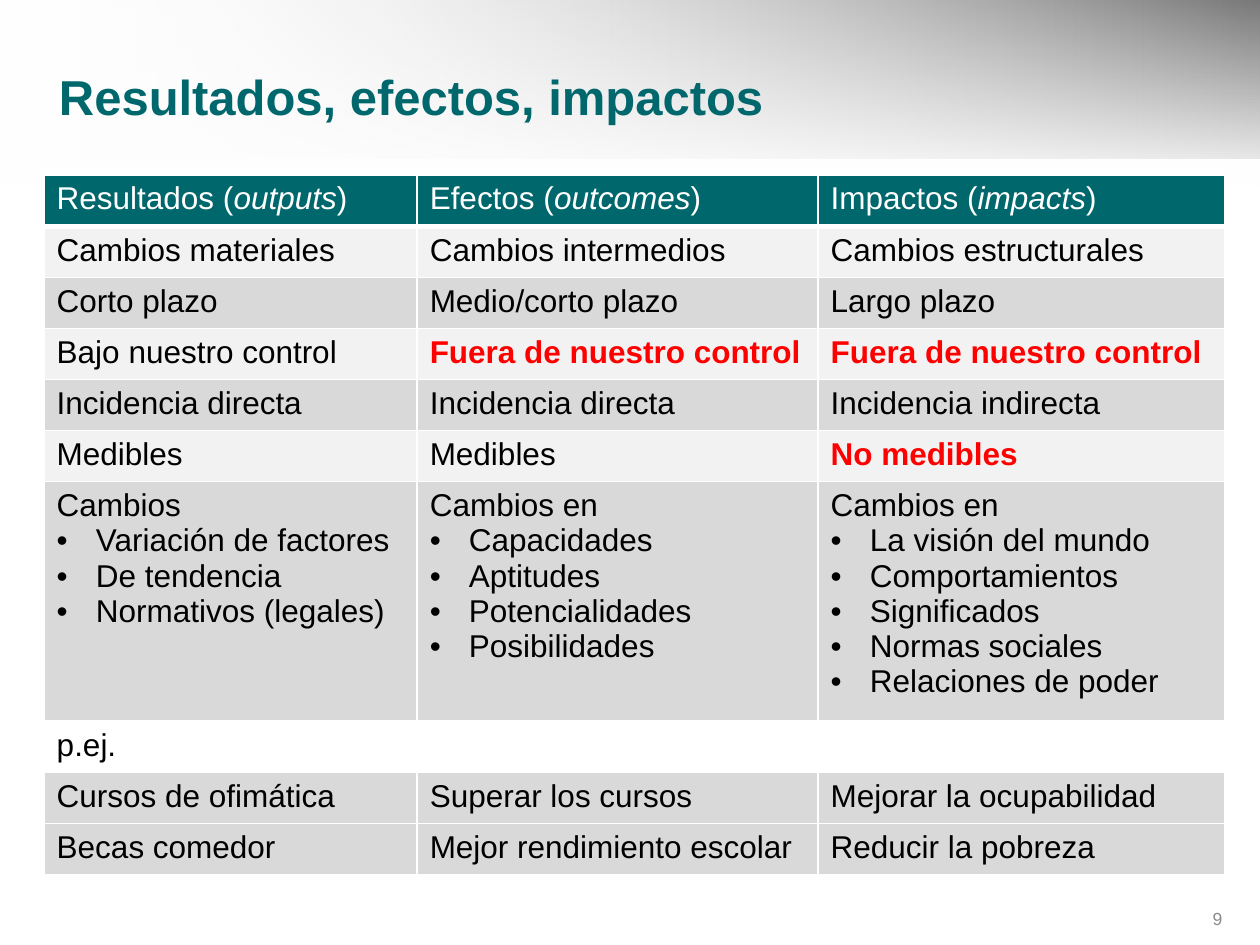
from lxml.etree import SubElement
from pptx import Presentation
from pptx.dml.color import RGBColor
from pptx.enum.shapes import MSO_SHAPE
from pptx.enum.text import MSO_ANCHOR, PP_ALIGN
from pptx.oxml import parse_xml
from pptx.oxml.ns import nsdecls, qn
from pptx.util import Cm, Pt

# Content
TITLE = "Resultados, efectos, impactos"
PAGE_NUMBER = "9"
HEADERS = [("Resultados", "outputs"), ("Efectos", "outcomes"), ("Impactos", "impacts")]
ROWS = [
    ["Cambios materiales", "Cambios intermedios", "Cambios estructurales"],
    ["Corto plazo", "Medio/corto plazo", "Largo plazo"],
    ["Bajo nuestro control", "Fuera de nuestro control", "Fuera de nuestro control"],
    ["Incidencia directa", "Incidencia directa", "Incidencia indirecta"],
    ["Medibles", "Medibles", "No medibles"],
    [
        "Cambios\nVariación de factores\nDe tendencia\nNormativos (legales)",
        "Cambios en\nCapacidades\nAptitudes\nPotencialidades\nPosibilidades",
        "Cambios en\nLa visión del mundo\nComportamientos\nSignificados\n"
        "Normas sociales\nRelaciones de poder",
    ],
    ["p.ej.", "", ""],
    ["Cursos de ofimática", "Superar los cursos", "Mejorar la ocupabilidad"],
    ["Becas comedor", "Mejor rendimiento escolar", "Reducir la pobreza"],
]
WARNINGS = {"Fuera de nuestro control", "No medibles"}

# Style
FONT = "Arial"
TEAL = RGBColor(0x00, 0x67, 0x6C)
WHITE = RGBColor(0xFF, 0xFF, 0xFF)
BLACK = RGBColor(0x00, 0x00, 0x00)
RED = RGBColor(0xFF, 0x00, 0x00)
GRAY = RGBColor(0x89, 0x89, 0x89)
LIGHT = RGBColor(0xF2, 0xF2, 0xF2)
DARK = RGBColor(0xD9, 0xD9, 0xD9)
ROW_FILLS = [LIGHT, DARK, LIGHT, DARK, LIGHT, DARK, None, DARK, DARK]

# Layout in centimetres
COLUMN_WIDTHS = [7.52, 8.08, 8.2]
ROW_HEIGHT, LIST_ROW_HEIGHT = 1.03, 4.5
LIST_ROW = 6
BULLET_INDENT = 0.79


def style_font(font, size, color, bold=False):
    font.name = FONT
    font.size = Pt(size)
    font.color.rgb = color
    font.bold = bold


def add_gradient_band(slide, height, angle, stops):
    """Stops are (position %, colour, opacity %)."""
    shape = slide.shapes.add_shape(MSO_SHAPE.RECTANGLE, 0, 0, Cm(25.4), Cm(height))
    shape.shadow.inherit = False
    shape.line.fill.background()
    stop_xml = "".join(
        f'<a:gs pos="{position * 1000}"><a:srgbClr val="{color}">'
        f'<a:alpha val="{opacity * 1000}"/></a:srgbClr></a:gs>'
        for position, color, opacity in stops
    )
    gradient = parse_xml(
        f'<a:gradFill {nsdecls("a")} rotWithShape="1"><a:gsLst>{stop_xml}</a:gsLst>'
        f'<a:lin ang="{angle * 60000}" scaled="0"/></a:gradFill>'
    )
    shape.element.spPr.find(qn("a:prstGeom")).addnext(gradient)


def add_text(slide, text, left, top, width, height, align, size, color, bold=False):
    text_frame = slide.shapes.add_textbox(Cm(left), Cm(top), Cm(width), Cm(height)).text_frame
    text_frame.word_wrap = True
    text_frame.vertical_anchor = MSO_ANCHOR.MIDDLE
    text_frame.text = text
    paragraph = text_frame.paragraphs[0]
    paragraph.alignment = align
    style_font(paragraph.runs[0].font, size, color, bold)


def style_cell(cell, fill, bottom_width=1):
    if fill is None:
        cell.fill.background()
    else:
        cell.fill.solid()
        cell.fill.fore_color.rgb = fill
    properties = cell._tc.get_or_add_tcPr()
    for index, (side, width) in enumerate([("L", 1), ("R", 1), ("T", 1), ("B", bottom_width)]):
        properties.insert(index, parse_xml(
            f'<a:ln{side} {nsdecls("a")} w="{Pt(width)}"><a:solidFill>'
            f'<a:srgbClr val="{WHITE}"/></a:solidFill></a:ln{side}>'
        ))


def add_bullet(paragraph):
    properties = paragraph._p.get_or_add_pPr()
    properties.set("marL", str(Cm(BULLET_INDENT)))
    properties.set("indent", str(-Cm(BULLET_INDENT)))
    SubElement(properties, qn("a:buFont")).set("typeface", FONT)
    SubElement(properties, qn("a:buChar")).set("char", "•")


def add_comparison_table(slide):
    table = slide.shapes.add_table(
        len(ROWS) + 1, len(HEADERS), Cm(0.89), Cm(3.53), Cm(sum(COLUMN_WIDTHS)),
        Cm(ROW_HEIGHT * len(ROWS) + LIST_ROW_HEIGHT),
    ).table
    table.first_row = False
    table.horz_banding = False
    for column, width in zip(table.columns, COLUMN_WIDTHS):
        column.width = Cm(width)
    for index, row in enumerate(table.rows):
        row.height = Cm(LIST_ROW_HEIGHT if index == LIST_ROW else ROW_HEIGHT)

    # Header row, with the English term in italics
    for cell, (name, term) in zip(table.rows[0].cells, HEADERS):
        style_cell(cell, TEAL, bottom_width=3)
        paragraph = cell.text_frame.paragraphs[0]
        for text, italic in [(f"{name} (", False), (term, True), (")", False)]:
            run = paragraph.add_run()
            run.text = text
            style_font(run.font, 18, WHITE)
            run.font.italic = italic

    # Body rows; lines after the first in a cell are bullets
    for row_index, (texts, fill) in enumerate(zip(ROWS, ROW_FILLS), start=1):
        for cell, text in zip(table.rows[row_index].cells, texts):
            style_cell(cell, fill)
            cell.text_frame.text = text
            warning = text in WARNINGS
            for index, paragraph in enumerate(cell.text_frame.paragraphs):
                if index:
                    add_bullet(paragraph)
                style_font(paragraph.font, 18, BLACK)
                for run in paragraph.runs:
                    style_font(run.font, 18, RED if warning else BLACK, warning)


def main():
    presentation = Presentation()
    presentation.slide_width, presentation.slide_height = Cm(25.4), Cm(19.05)
    slide = presentation.slides.add_slide(presentation.slide_layouts[6])

    # Shaded band fading to white at the left and the bottom
    add_gradient_band(slide, 3.2, 0, [(0, WHITE, 0), (100, BLACK, 100)])
    add_gradient_band(slide, 3.81, 90, [(0, WHITE, 47), (100, WHITE, 100)])

    add_text(slide, PAGE_NUMBER, 23.29, 18.14, 1.6, 0.74, PP_ALIGN.RIGHT, 10, GRAY)
    add_text(slide, TITLE, 0.94, 1.14, 23.37, 1.6, PP_ALIGN.LEFT, 28, TEAL, bold=True)
    add_comparison_table(slide)
    presentation.save("out.pptx")


if __name__ == "__main__":
    main()
